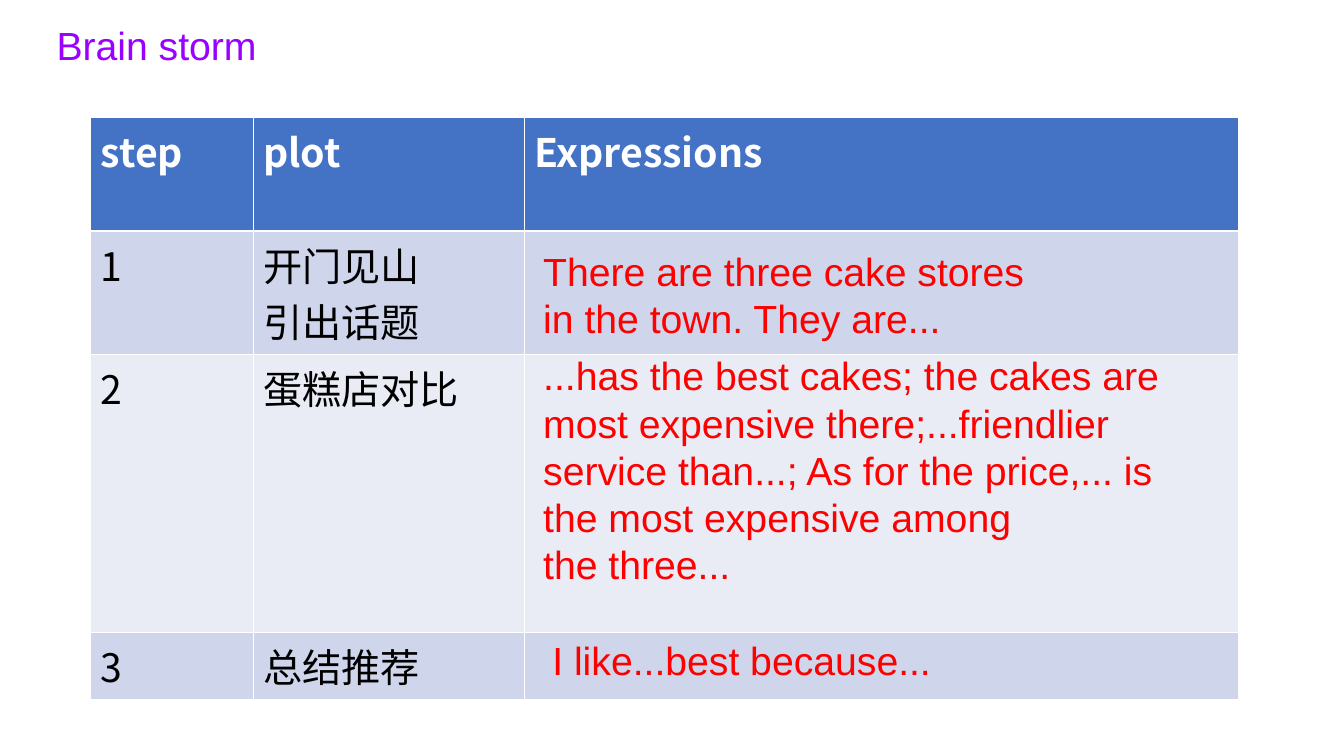
from pptx import Presentation
from pptx.dml.color import RGBColor as RGB
from pptx.enum.text import MSO_ANCHOR as Anchor, MSO_AUTO_SIZE as Fit, PP_ALIGN as Align
from pptx.oxml.ns import qn
from pptx.util import Cm, Pt
from lxml.etree import SubElement as Sub

HUES = {"title": "9900FF", "note": "FF0000", "head": "4472C4", "odd": "CFD5EA",
        "even": "E9EBF5", "white": "FFFFFF", "black": "000000"}
SANS = "Noto Sans CJK SC"
COLS = [4.09, 6.83, 18.01]
ROWS = [2.87, 2.9, 7.01, 1.63]
CELLS = [["step", "plot", "Expressions"],
         ["1", "开门见山\n引出话题", ""],
         ["2", "蛋糕店对比", ""],
         ["3", "总结推荐", ""]]
NOTES = [
    (13.44, 6.1, 2.64, "There are three cake stores\nin the town. They are..."),
    (13.44, 8.74, 6.25, "...has the best cakes; the cakes are most expensive there;"
     "...friendlier service than...; As for the price,... is\n"
     "the most expensive among\nthe three..."),
    (13.67, 15.9, 1.45, "I like...best because..."),
]


def write(frame, text, hue, font="Arial", size=28, bold=False, gap=None):
    """Fill a text frame with left-aligned, formatted paragraphs."""
    frame.text = text
    frame.word_wrap = True
    for para in frame.paragraphs:
        para.alignment = Align.LEFT
        para.line_spacing = gap
        for run in para.runs:
            face = run.font
            face.name, face.size, face.bold = font, Pt(size), bold
            face.color.rgb = RGB.from_string(HUES[hue])
            Sub(face._element, qn("a:ea")).set("typeface", font)


def add_title(slide, text):
    """Place and format the title."""
    title = slide.shapes.title
    title.left, title.top, title.width, title.height = Cm(1.17), Cm(-0.13), Cm(29.21), Cm(3.68)
    frame = title.text_frame
    write(frame, text, "title", gap=0.9)
    frame.auto_size = Fit.NONE
    frame.vertical_anchor = Anchor.TOP
    frame.margin_top = Cm(0.8)


def add_grid(slide):
    """Add the table of steps with a header and banded rows."""
    grid = slide.shapes.add_table(len(ROWS), len(COLS), Cm(2.29), Cm(2.95),
                                  Cm(sum(COLS)), Cm(sum(ROWS))).table
    for col, width in zip(grid.columns, COLS):
        col.width = Cm(width)
    for i, (row, height) in enumerate(zip(grid.rows, ROWS)):
        row.height = Cm(height)
        fill = "head" if i == 0 else "odd" if i % 2 else "even"
        for cell, text in zip(row.cells, CELLS[i]):
            cell.fill.solid()
            cell.fill.fore_color.rgb = RGB.from_string(HUES[fill])
            write(cell.text_frame, text, "black" if i else "white", font=SANS, bold=i == 0)


def add_note(slide, left, top, height, text):
    """Add a text box of sample expressions."""
    box = slide.shapes.add_textbox(Cm(left), Cm(top), Cm(17.96), Cm(height))
    write(box.text_frame, text, "note")
    box.text_frame.auto_size = Fit.SHAPE_TO_FIT_TEXT


def main():
    """Build and save the slide."""
    deck = Presentation()
    deck.slide_width, deck.slide_height = Cm(33.87), Cm(19.05)
    slide = deck.slides.add_slide(deck.slide_layouts[5])
    add_title(slide, "Brain storm")
    add_grid(slide)
    for note in NOTES:
        add_note(slide, *note)
    deck.save("out.pptx")


if __name__ == "__main__":
    main()
